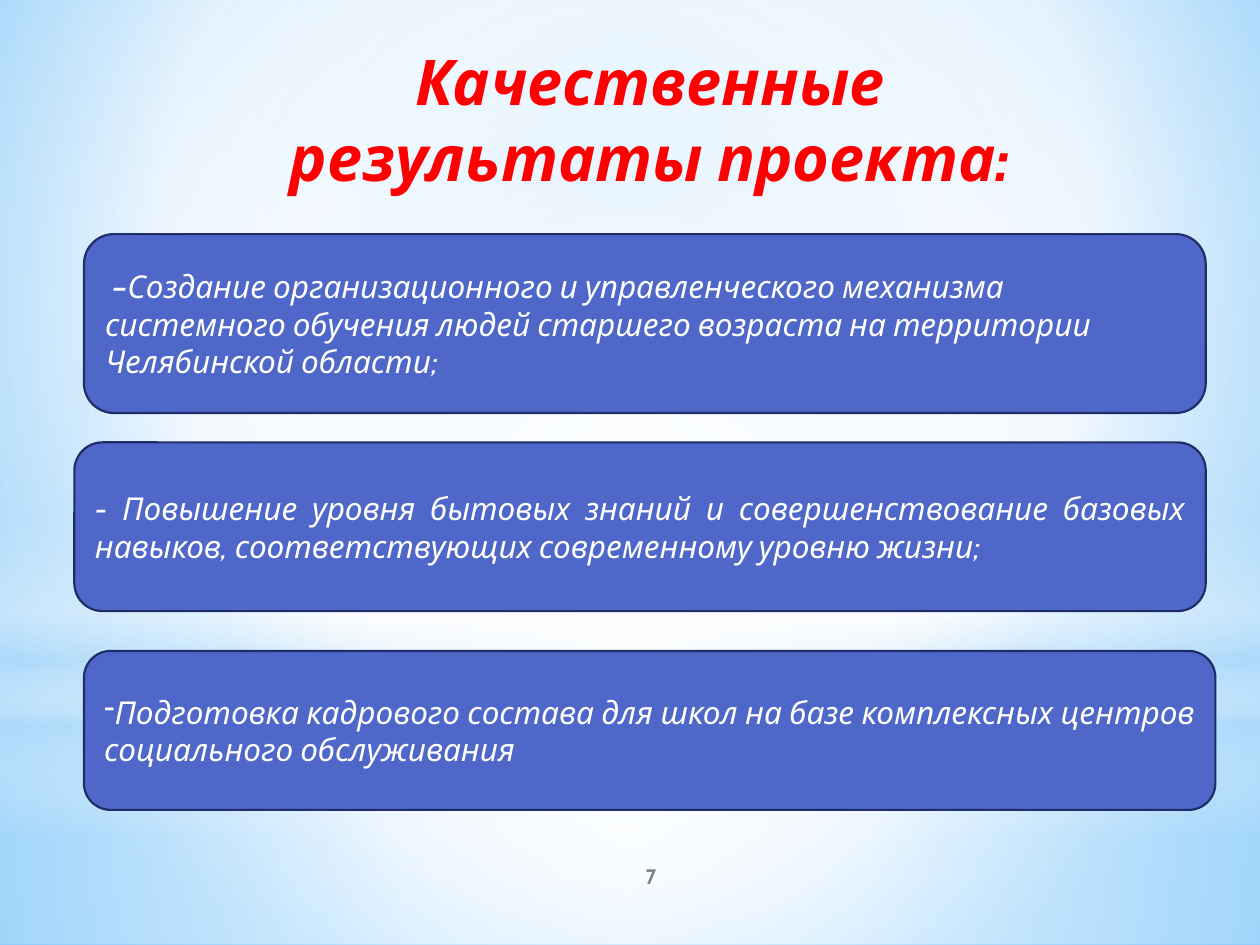
import pptx
import pptx.dml.color
import pptx.enum.shapes
import pptx.enum.text
import pptx.oxml
import pptx.oxml.ns
import pptx.util
from lxml import etree

Pt = pptx.util.Pt
SHAPES = pptx.enum.shapes.MSO_SHAPE
ALIGN = pptx.enum.text.PP_ALIGN
MIDDLE = pptx.enum.text.MSO_ANCHOR.MIDDLE

FONT = "Cabin"
WIDTH, HEIGHT = 720, 540
COLORS = {
    "card": "4E67C8", "border": "1F2E69", "card text": "FFFFFF",
    "title": "FF0000", "number": "808080",
    "white": "FFFFFF", "haze": "B4DCFA", "sky": "9ED5FF", "deep sky": "5BB9FF",
}
CENTER = (50, 50, 50, 50)

# Gradient stops: position %, colour, opacity %
BACKGROUND = [(0, "sky", 100), (60, "white", 100), (100, "deep sky", 100)]
BACKGROUND_FOCUS = (20, 10, 20, 60)
# Shape, (left, top, width, height), stops, focus (None for a vertical gradient)
GLOWS = [
    (SHAPES.RECTANGLE, (0, 402, WIDTH, 138),
     [(0, "white", 91), (37, "white", 76), (100, "haze", 79)], CENTER),
    (SHAPES.RECTANGLE, (0, 0, WIDTH, 402),
     [(0, "white", 89), (48, "white", 62), (100, "haze", 79)], CENTER),
    (SHAPES.RECTANGLE, (0, 297, WIDTH, 180),
     [(0, "white", 0), (29, "white", 30), (45, "haze", 40),
      (55, "white", 26), (65, "haze", 60), (100, "white", 0)], None),
    (SHAPES.OVAL, (0, 126, WIDTH, 402),
     [(0, "white", 100), (56, "white", 0)], CENTER),
]

TITLE = ["Качественные", "результаты проекта:"]
# (left, top, width, height), alignment, bullet, bold lead, text
CARDS = [
    ((48, 133.8, 641, 102.2), ALIGN.LEFT, None, " –",
     "Создание организационного и управленческого механизма системного "
     "обучения людей старшего возраста на территории Челябинской области;"),
    ((42.5, 252.8, 646.5, 96.4), ALIGN.JUSTIFY, None, "",
     "- Повышение уровня бытовых знаний и совершенствование базовых "
     "навыков, соответствующих современному уровню жизни;"),
    ((48, 372, 646.5, 90.8), ALIGN.JUSTIFY, "-", "",
     "Подготовка кадрового состава для школ на базе комплексных центров "
     "социального обслуживания"),
]


def rgb(name):
    return pptx.dml.color.RGBColor.from_string(COLORS[name])


def gradient(stops, focus):
    stop_xml = "".join(
        f'<a:gs pos="{position * 1000}"><a:srgbClr val="{COLORS[color]}">'
        f'<a:alpha val="{opacity * 1000}"/></a:srgbClr></a:gs>'
        for position, color, opacity in stops)
    if focus:
        sides = " ".join(f'{side}="{value * 1000}"' for side, value in zip("ltrb", focus))
        direction = f'<a:path path="circle"><a:fillToRect {sides}/></a:path>'
    else:
        direction = '<a:lin ang="5400000" scaled="0"/>'
    return pptx.oxml.parse_xml(
        f'<a:gradFill {pptx.oxml.ns.nsdecls("a")} rotWithShape="1">'
        f'<a:gsLst>{stop_xml}</a:gsLst>{direction}</a:gradFill>')


def set_gradient(fill, element, stops, focus):
    """Swap the solid fill inside element for a gradient."""
    fill.solid()
    solid = element.xpath(".//a:solidFill")[0]
    solid.getparent().replace(solid, gradient(stops, focus))


def add_shape(slide, kind, box):
    shape = slide.shapes.add_shape(kind, *map(Pt, box))
    shape.shadow.inherit = False
    return shape


def style(paragraph, size, color, alignment, bold=False, italic=False):
    paragraph.alignment = alignment
    font = paragraph.font
    font.name, font.size, font.bold, font.italic = FONT, Pt(size), bold, italic
    font.color.rgb = rgb(color)


def add_card(slide, box, alignment, bullet, lead, text):
    card = add_shape(slide, SHAPES.FLOWCHART_ALTERNATE_PROCESS, box)
    card.fill.solid()
    card.fill.fore_color.rgb = rgb("card")
    card.line.color.rgb = rgb("border")
    card.line.width = Pt(1.25)
    frame = card.text_frame
    frame.word_wrap = True
    frame.vertical_anchor = MIDDLE
    paragraph = frame.paragraphs[0]
    style(paragraph, 18, "card text", alignment, italic=True)
    if lead:
        run = paragraph.add_run()
        run.text = lead
        run.font.bold = True
    paragraph.add_run().text = text
    if bullet:
        properties = paragraph.alignment is not None and paragraph.runs[0].font and \
            card.element.xpath(".//a:pPr")[0]
        mark = etree.Element(pptx.oxml.ns.qn("a:buChar"), char=bullet)
        properties.find(pptx.oxml.ns.qn("a:defRPr")).addprevious(mark)


def add_text(slide, box, lines, size, color, anchor=None, italic=False):
    frame = slide.shapes.add_textbox(*map(Pt, box)).text_frame
    frame.word_wrap = True
    frame.vertical_anchor = anchor
    frame.text = "\n".join(lines)
    for paragraph in frame.paragraphs:
        style(paragraph, size, color, ALIGN.CENTER, bold=True, italic=italic)


def main():
    presentation = pptx.Presentation()
    presentation.slide_width, presentation.slide_height = Pt(WIDTH), Pt(HEIGHT)
    slide = presentation.slides.add_slide(presentation.slide_layouts[6])
    set_gradient(slide.background.fill, slide.element, BACKGROUND, BACKGROUND_FOCUS)
    for kind, box, stops, focus in GLOWS:
        glow = add_shape(slide, kind, box)
        glow.line.fill.background()
        set_gradient(glow.fill, glow.element, stops, focus)
    add_text(slide, (93.6, 21, 556, 94.5), TITLE, 36, "title", italic=True)
    for card in CARDS:
        add_card(slide, *card)
    add_text(slide, (300, 486, 144, 28.8), ["7"], 12, "number", anchor=MIDDLE)
    presentation.save("out.pptx")


if __name__ == "__main__":
    main()
